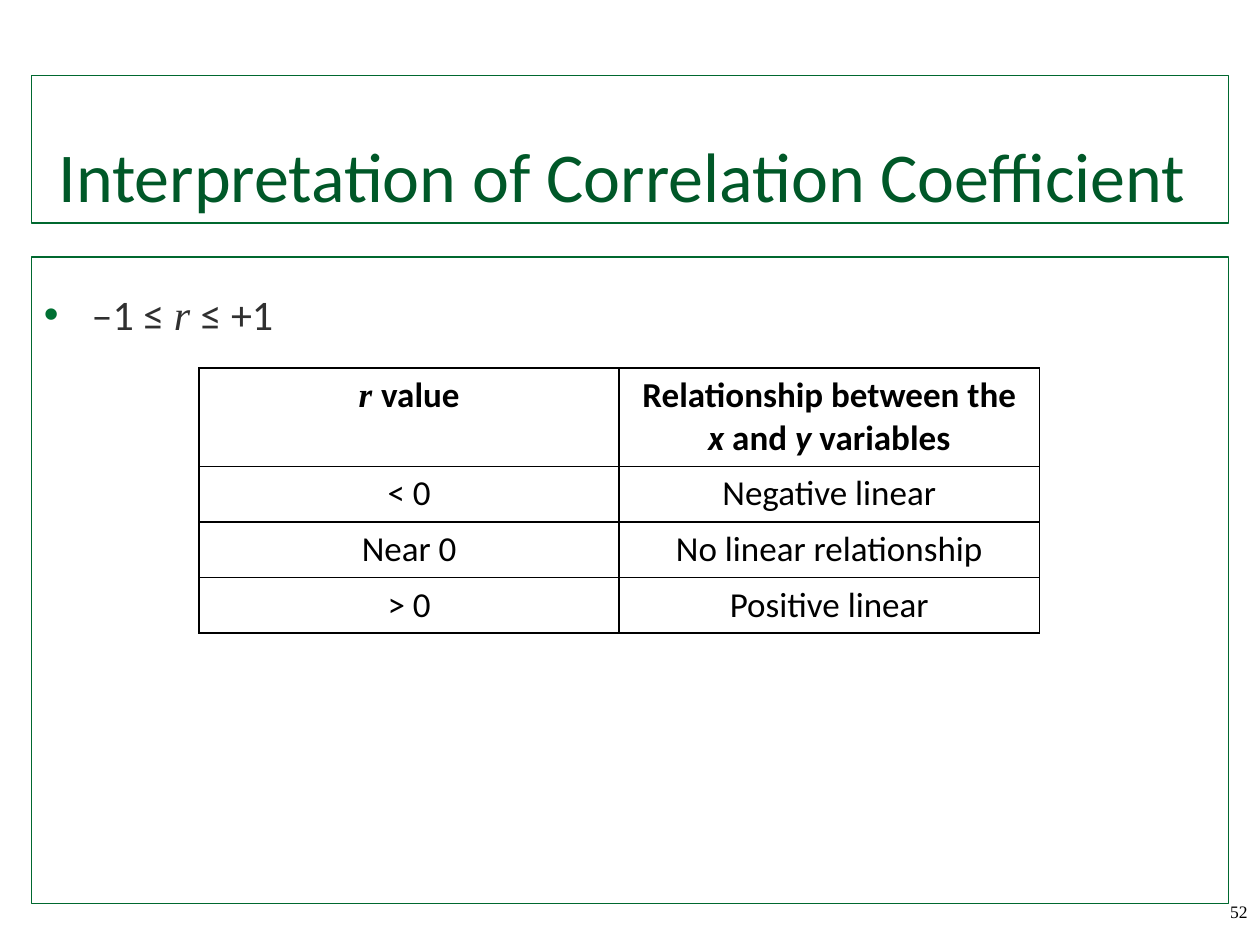
from lxml import etree
from pptx import Presentation
from pptx.dml.color import RGBColor
from pptx.enum.shapes import MSO_SHAPE as Shape
from pptx.enum.text import MSO_ANCHOR as Anchor, PP_ALIGN as Align
from pptx.oxml.ns import qn
from pptx.util import Inches, Pt

GREEN, BULLET_GREEN, TITLE_GREEN = "00682F", "007033", "005828"
GREY, BLACK = "303030", "000000"
SANS, SERIF = "Calibri", "Times New Roman"
ITALIC = {"italic": True}
SERIF_ITALIC = {"name": SERIF, "italic": True}

# Each cell is a list of (text, font changes) runs
TABLE_ROWS = [
    [[("r ", SERIF_ITALIC), ("value", {})],
     [("Relationship between the ", {}), ("x", ITALIC), (" and ", {}),
      ("y", ITALIC), (" variables", {})]],
    [[("< 0", {})], [("Negative linear", {})]],
    [[("Near 0", {})], [("No linear relationship", {})]],
    [[("> 0", {})], [("Positive linear", {})]],
]


def color(value):
    return RGBColor.from_string(value)


def set_values(target, values):
    for name, value in values.items():
        setattr(target, name, value)


def add_runs(paragraph, runs, size, font_color, **base):
    for text, changes in runs:
        run = paragraph.add_run()
        run.text = text
        set_values(run.font, {"name": SANS, "size": Pt(size), **base, **changes})
        run.font.color.rgb = color(font_color)


def add_frame(slide, top, height, anchor):
    """Add a green outlined box and return its text frame."""
    shape = slide.shapes.add_shape(
        Shape.RECTANGLE, Inches(0.25), Inches(top), Inches(9.5), Inches(height))
    shape.shadow.inherit = False
    shape.fill.background()
    shape.line.color.rgb = color(GREEN)
    shape.line.width = Pt(0.75)
    set_values(shape.text_frame, {"word_wrap": True, "vertical_anchor": anchor})
    return shape.text_frame


def add_bullet(paragraph, indent):
    properties = paragraph._p.get_or_add_pPr()
    properties.set("marL", str(Inches(indent)))
    properties.set("indent", str(-Inches(indent)))
    bullet_color = etree.SubElement(properties, qn("a:buClr"))
    etree.SubElement(bullet_color, qn("a:srgbClr"), val=BULLET_GREEN)
    etree.SubElement(properties, qn("a:buFont"), typeface="Arial")
    etree.SubElement(properties, qn("a:buChar"), char="•")


def add_borders(cell):
    """Draw all four cell borders, placed before the cell's fill."""
    properties = cell._tc.get_or_add_tcPr()
    for position, side in enumerate(("lnL", "lnR", "lnT", "lnB")):
        line = etree.Element(qn(f"a:{side}"), w=str(Pt(1)))
        fill = etree.SubElement(line, qn("a:solidFill"))
        etree.SubElement(fill, qn("a:srgbClr"), val=BLACK)
        properties.insert(position, line)


def add_value_table(slide):
    heights = [0.78, 0.44, 0.44, 0.44]
    table = slide.shapes.add_table(
        len(TABLE_ROWS), 2, Inches(1.58), Inches(2.92),
        Inches(6.67), Inches(sum(heights))).table
    set_values(table, {"first_row": False, "horz_banding": False})
    for row_index, cells in enumerate(TABLE_ROWS):
        table.rows[row_index].height = Inches(heights[row_index])
        for column_index, runs in enumerate(cells):
            cell = table.cell(row_index, column_index)
            cell.fill.background()
            add_borders(cell)
            paragraph = cell.text_frame.paragraphs[0]
            paragraph.alignment = Align.CENTER
            add_runs(paragraph, runs, 20, BLACK, bold=row_index == 0)


def add_page_number(slide, number):
    box = slide.shapes.add_textbox(
        Inches(9.17), Inches(7.1), Inches(0.83), Inches(0.4))
    box.text_frame.word_wrap = True
    paragraph = box.text_frame.paragraphs[0]
    paragraph.alignment = Align.RIGHT
    add_runs(paragraph, [(number, {})], 10, BLACK, name=SERIF)


def main():
    presentation = Presentation()
    presentation.slide_width = Inches(10)
    presentation.slide_height = Inches(7.5)
    slide = presentation.slides.add_slide(presentation.slide_layouts[6])

    # Title
    title = add_frame(slide, 0.6, 1.17, Anchor.BOTTOM).paragraphs[0]
    title.alignment = Align.CENTER
    add_runs(title, [("Interpretation of Correlation Coefficient ", {})],
             40, TITLE_GREEN)

    # Range of r
    body = add_frame(slide, 2.04, 5.13, Anchor.TOP).paragraphs[0]
    set_values(body, {"alignment": Align.LEFT, "line_spacing": 1.5,
                      "space_after": Pt(6)})
    add_bullet(body, 0.38)
    add_runs(body, [("–1 ≤ ", {}), ("r ", SERIF_ITALIC), ("≤ +1", {})], 24, GREY)

    # Table and page number
    add_value_table(slide)
    add_page_number(slide, "52")

    presentation.save("out.pptx")


if __name__ == "__main__":
    main()
